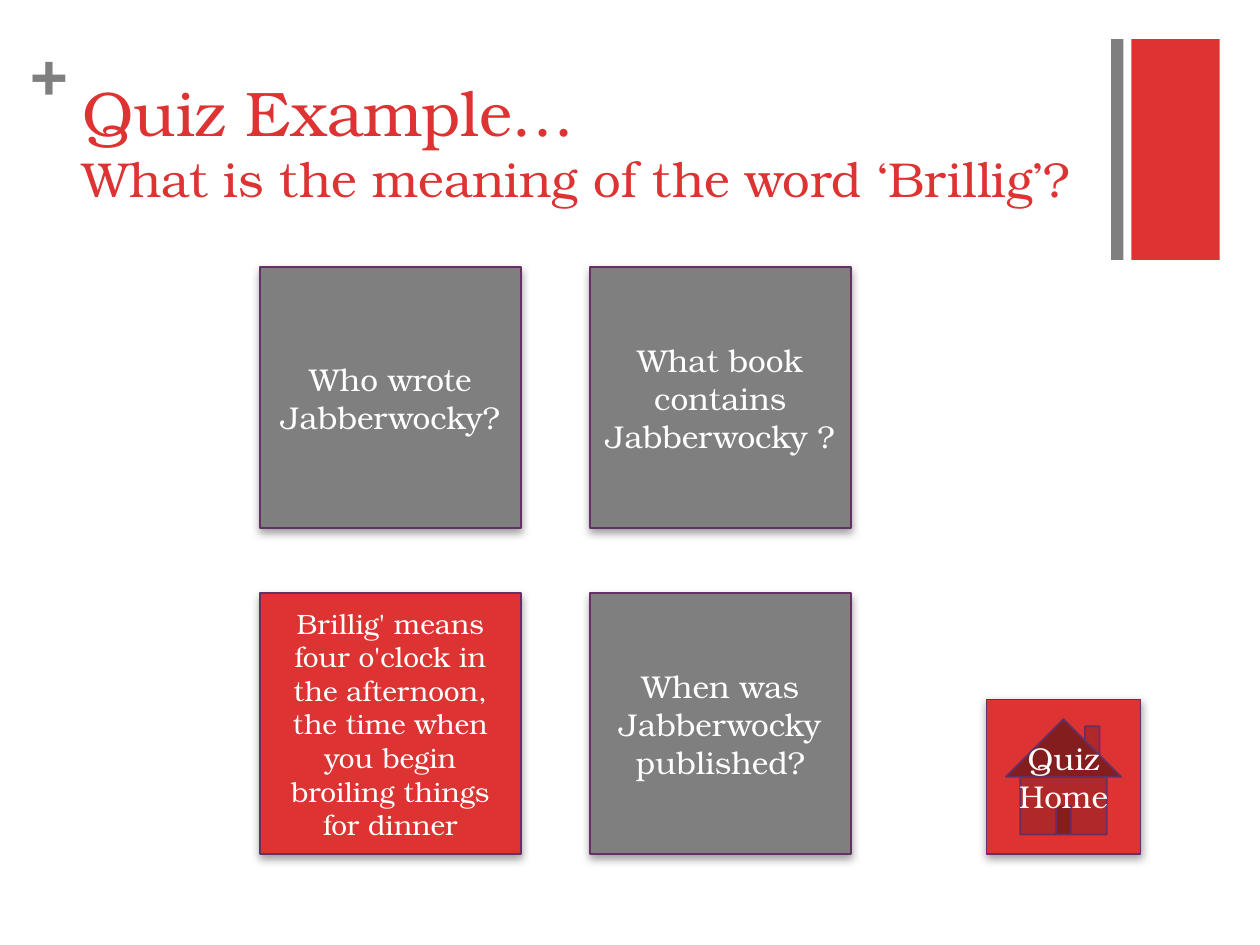
"""Build the Jabberwocky quiz slide with its answer cards and home button."""
from pptx import Presentation
from pptx.dml.color import RGBColor
from pptx.enum.shapes import MSO_SHAPE
from pptx.enum.text import MSO_ANCHOR, MSO_AUTO_SIZE, PP_ALIGN
from pptx.oxml import parse_xml
from pptx.util import Cm, Pt

RED = RGBColor(0xDD, 0x33, 0x33)
GREY = RGBColor(0x7F, 0x7F, 0x7F)
PURPLE = RGBColor(0x65, 0x31, 0x65)
WHITE = RGBColor(0xFF, 0xFF, 0xFF)
FONT = "TeX Gyre Bonum"
RECTANGLE = MSO_SHAPE.RECTANGLE
BLANK_BUTTON = MSO_SHAPE.ACTION_BUTTON_CUSTOM
HOME_BUTTON = MSO_SHAPE.ACTION_BUTTON_HOME
TOP, MIDDLE = MSO_ANCHOR.TOP, MSO_ANCHOR.MIDDLE
LEFT, CENTER = PP_ALIGN.LEFT, PP_ALIGN.CENTER
NO_FIT = MSO_AUTO_SIZE.NONE
TITLE_ONLY = 5

TITLE = [("Quiz Example…", 36), ("What is the meaning of the word ‘Brillig’?", 28)]
BARS = [((22.81, 0.79, 1.78, 4.45), RED), ((22.4, 0.79, 0.25, 4.45), GREY)]
CARDS = [
    ("Who wrote Jabberwocky?", GREY, 18),
    ("What book contains Jabberwocky ?", GREY, 18),
    ("Brillig' means four o'clock in the afternoon, the time when you begin "
     "broiling things for dinner", RED, 16),
    ("When was Jabberwocky published?", GREY, 18),
]
CARD_LEFT, CARD_TOP, CARD_SIDE = 5.24, 5.39, 5.26
COLUMN_STEP, ROW_STEP = 6.65, 6.57
HOME = (["Quiz", "Home"], (19.89, 14.1, 3.1, 3.12))
SHADOW = (
    '<a:effectLst xmlns:a="http://schemas.openxmlformats.org/drawingml/2006/main">'
    '<a:outerShdw blurRad="63500" dist="25400" dir="5400000" rotWithShape="0">'
    '<a:srgbClr val="808080"><a:alpha val="75000"/></a:srgbClr>'
    "</a:outerShdw></a:effectLst>"
)


def apply(target, **values):
    for name, value in values.items():
        setattr(target, name, value)


def write(para, text, size, color, bold=False):
    span = para.add_run()
    span.text = text
    apply(span.font, name=FONT, size=Pt(size), bold=bold)
    span.font.color.rgb = color


def add_block(slide, kind, place, fill):
    box = slide.shapes.add_shape(kind, *map(Cm, place))
    box.shadow.inherit = False
    box.fill.solid()
    box.fill.fore_color.rgb = fill
    box.line.fill.background()
    return box


def add_button(slide, kind, place, fill, lines, size):
    box = add_block(slide, kind, place, fill)
    box.line.color.rgb = PURPLE
    box.line.width = Pt(1)
    properties = box.element.spPr
    properties.replace(properties.find("{*}effectLst"), parse_xml(SHADOW))
    frame = box.text_frame
    apply(frame, word_wrap=True, vertical_anchor=MIDDLE)
    for index, line in enumerate(lines):
        para = frame.add_paragraph() if index else frame.paragraphs[0]
        para.alignment = CENTER
        write(para, line, size, WHITE)


def add_title(slide):
    title = slide.shapes.title
    apply(title, left=Cm(1.4), top=Cm(1.35), width=Cm(20.98), height=Cm(3.1))
    frame = title.text_frame
    apply(frame, word_wrap=True, auto_size=NO_FIT, vertical_anchor=TOP)
    para = frame.paragraphs[0]
    para.alignment = LEFT
    for index, (text, size) in enumerate(TITLE):
        if index:
            para.add_line_break()
        write(para, text, size, RED)


def add_plus(slide):
    box = slide.shapes.add_textbox(Cm(0.61), Cm(0.64), Cm(0.74), Cm(1.55))
    apply(box.text_frame, margin_left=0, margin_right=0, margin_top=0,
          margin_bottom=0, word_wrap=False)
    write(box.text_frame.paragraphs[0], "+", 36, GREY, bold=True)


def main():
    deck = Presentation()
    apply(deck, slide_width=Cm(25.4), slide_height=Cm(19.05))
    slide = deck.slides.add_slide(deck.slide_layouts[TITLE_ONLY])
    for place, color in BARS:
        add_block(slide, RECTANGLE, place, color)
    add_plus(slide)
    add_title(slide)
    for index, (text, color, size) in enumerate(CARDS):
        row, column = divmod(index, 2)
        place = (CARD_LEFT + column * COLUMN_STEP, CARD_TOP + row * ROW_STEP,
                 CARD_SIDE, CARD_SIDE)
        add_button(slide, BLANK_BUTTON, place, color, [text], size)
    lines, place = HOME
    add_button(slide, HOME_BUTTON, place, RED, lines, 18)
    deck.save("out.pptx")


if __name__ == "__main__":
    main()
